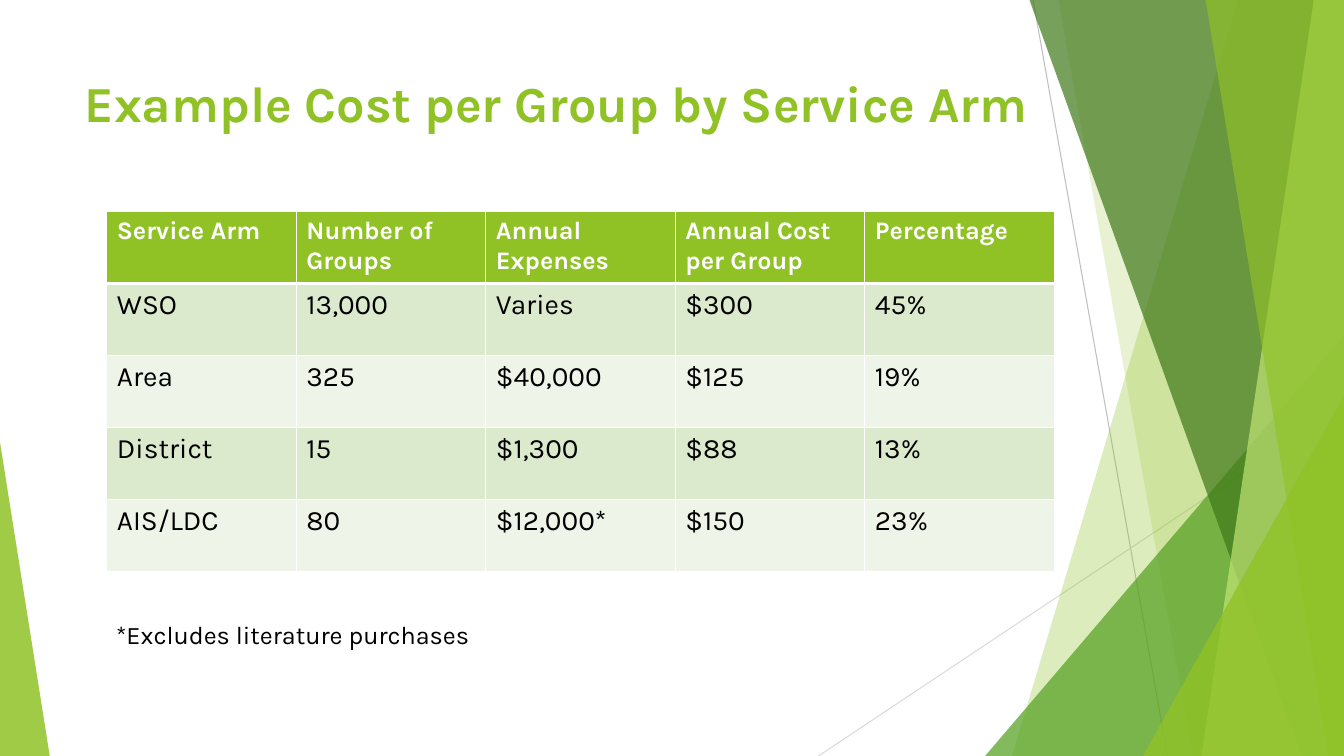
from lxml import etree
from pptx import Presentation
from pptx.dml.color import RGBColor
from pptx.enum.shapes import MSO_CONNECTOR, MSO_SHAPE
from pptx.enum.text import MSO_ANCHOR, PP_ALIGN
from pptx.oxml.ns import qn
from pptx.util import Inches, Pt

STRAIGHT = MSO_CONNECTOR.STRAIGHT
TRIANGLE = MSO_SHAPE.ISOSCELES_TRIANGLE
LEFT = PP_ALIGN.LEFT
TOP = MSO_ANCHOR.TOP

COLORS = {
    "lime": "90C226",
    "pale_lime": "C0E474",
    "green": "54A021",
    "forest": "3F7819",
    "odd_row": "DBE9CD",
    "even_row": "EEF4E8",
    "line": "BFBFBF",
    "light_line": "D9D9D9",
    "white": "FFFFFF",
    "black": "000000",
}

LINES = [((76.87, 0), (86.87, 100), "line"), ((100, 53.7), (60.9, 100), "light_line")]
BACK_BANDS = [(92.1, 75.3, "lime", 30), (78.75, 88.75, "lime", 20)]
FRONT_BANDS = [
    (76.6, 96.85, "forest", 70),
    (97.75, 89.4, "pale_lime", 70),
    (89.7, 98.85, "lime", 65),
]
COST_ROWS = [
    ["Service Arm", "Number of Groups", "Annual Expenses", "Annual Cost per Group", "Percentage"],
    ["WSO", "13,000", "Varies", "$300", "45%"],
    ["Area", "325", "$40,000", "$125", "19%"],
    ["District", "15", "$1,300", "$88", "13%"],
    ["AIS/LDC", "80", "$12,000*", "$150", "23%"],
]


def color(name):
    return RGBColor.from_string(COLORS[name])


def write(frame, text, size=18, color_name="black", bold=False, font="Karla"):
    frame.word_wrap = True
    paragraph = frame.paragraphs[0]
    paragraph.alignment = LEFT
    run = paragraph.add_run()
    run.text = text
    run.font.name = font
    run.font.size = Pt(size)
    run.font.bold = bold
    run.font.color.rgb = color(color_name)


class SlideBuilder:
    """Lengths are percentages of the slide's width and height."""

    def __init__(self, presentation):
        self.width = presentation.slide_width
        self.height = presentation.slide_height
        self.slide = presentation.slides.add_slide(presentation.slide_layouts[6])
        self.shapes = self.slide.shapes

    def x(self, share):
        return round(self.width * share / 100)

    def y(self, share):
        return round(self.height * share / 100)

    def box(self, left, top, width, height):
        return self.x(left), self.y(top), self.x(width), self.y(height)

    def line(self, start, end, color_name):
        connector = self.shapes.add_connector(
            STRAIGHT, self.x(start[0]), self.y(start[1]), self.x(end[0]), self.y(end[1])
        )
        connector.line.color.rgb = color(color_name)
        connector.line.width = Pt(0.75)
        etree.SubElement(connector._element.spPr, qn("a:effectLst"))

    def paint(self, shape, color_name, opacity):
        shape.shadow.inherit = False
        shape.fill.solid()
        shape.fill.fore_color.rgb = color(color_name)
        shape.line.fill.background()
        fill_color = shape._element.spPr.find(qn("a:solidFill"))[0]
        etree.SubElement(fill_color, qn("a:alpha"), val=str(opacity * 1000))

    def band(self, top_x, bottom_x, color_name, opacity):
        builder = self.shapes.build_freeform(self.x(top_x), 0)
        corners = [(100, 0), (100, 100), (bottom_x, 100)]
        builder.add_line_segments([(self.x(x), self.y(y)) for x, y in corners])
        self.paint(builder.convert_to_shape(), color_name, opacity)

    def triangle(self, left, top, width, apex, color_name, opacity):
        shape = self.shapes.add_shape(TRIANGLE, *self.box(left, top, width, 100 - top))
        shape.adjustments[0] = apex
        self.paint(shape, color_name, opacity)

    def text(self, left, top, width, height, text, **style):
        frame = self.shapes.add_textbox(*self.box(left, top, width, height)).text_frame
        frame.vertical_anchor = TOP
        write(frame, text, **style)

    def border(self, cell, side, points):
        properties = cell._tc.get_or_add_tcPr()
        line = etree.SubElement(properties, qn(f"a:ln{side}"), w=str(Pt(points)))
        fill = etree.SubElement(line, qn("a:solidFill"))
        etree.SubElement(fill, qn("a:srgbClr"), val=COLORS["white"])

    def table(self, left, top, width, height, rows):
        place = self.box(left, top, width, height)
        table = self.shapes.add_table(len(rows), len(rows[0]), *place).table
        for row_index, row in enumerate(rows):
            header = row_index == 0
            fill_name = "lime" if header else "odd_row" if row_index % 2 else "even_row"
            style = {"color_name": "white", "bold": True} if header else {"size": 20}
            widths = {"L": 1, "R": 1, "T": 3 if row_index == 1 else 1, "B": 3 if header else 1}
            for column_index, text in enumerate(row):
                cell = table.cell(row_index, column_index)
                for side, points in widths.items():
                    self.border(cell, side, points)
                cell.fill.solid()
                cell.fill.fore_color.rgb = color(fill_name)
                write(cell.text_frame, text, **style)


def main():
    presentation = Presentation()
    presentation.slide_width = Inches(13.33)
    presentation.slide_height = Inches(7.5)
    builder = SlideBuilder(presentation)
    for line in LINES:
        builder.line(*line)
    for band in BACK_BANDS:
        builder.band(*band)
    builder.triangle(73.3, 44.4, 26.7, 1, "green", 72)
    for band in FRONT_BANDS:
        builder.band(*band)
    builder.triangle(85.05, 52.4, 14.95, 1, "lime", 80)
    builder.triangle(0, 58.5, 3.7, 0, "lime", 85)
    builder.text(
        5.55, 8.9, 72.9, 19.1, "Example Cost per Group by Service Arm",
        size=36, color_name="lime", bold=True,
    )
    builder.text(7.9, 81.3, 30.2, 5.35, "*Excludes literature purchases")
    builder.table(7.95, 28, 70.5, 47.6, COST_ROWS)
    presentation.save("out.pptx")


if __name__ == "__main__":
    main()
